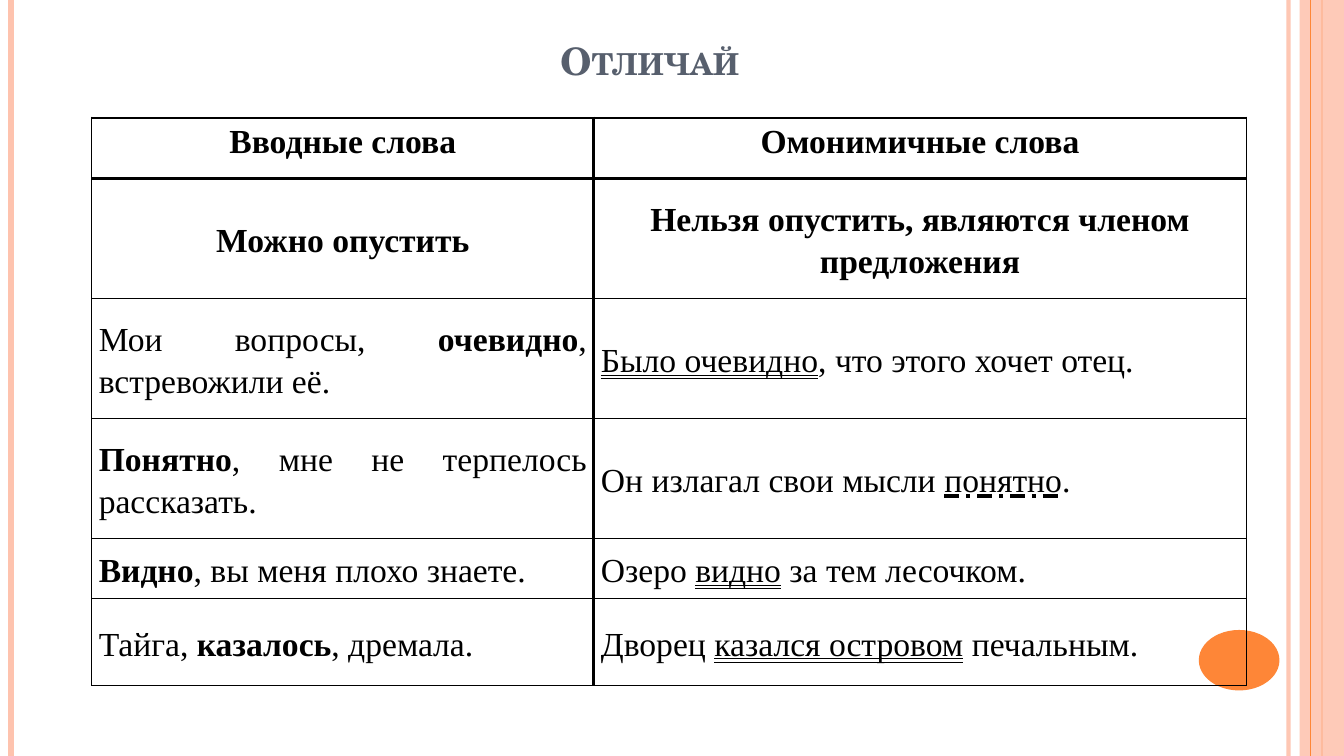
from lxml.etree import SubElement
from pptx import Presentation
from pptx.dml.color import RGBColor
from pptx.enum.shapes import MSO_CONNECTOR, MSO_SHAPE
from pptx.enum.text import MSO_ANCHOR, MSO_UNDERLINE, PP_ALIGN
from pptx.oxml.ns import qn
from pptx.util import Emu, Pt

W, H = 1333, 750
COLORS = {"peach": "FEC3AE", "orange": "FE8637", "title": "575F6D", "black": "000000"}
TITLE_FONT, TABLE_FONT = "TeX Gyre Schola", "Times New Roman"
THIN, THICK = 1, 2.25

COL_WIDTHS = [498, 647]
ROW_HEIGHTS = [60, 119, 119, 119, 60, 86]
CENTER, JUSTIFY, LEFT = PP_ALIGN.CENTER, PP_ALIGN.JUSTIFY, PP_ALIGN.LEFT
BOLD = {"bold": True}
PREDICATE = {"underline": MSO_UNDERLINE.DOUBLE_LINE}
ADVERBIAL = {"underline": MSO_UNDERLINE.DOT_DASH_HEAVY_LINE}

# Each cell: alignment, then runs of (text, font settings)
ROWS = [
    [(CENTER, [("Вводные слова", BOLD)]),
     (CENTER, [("Омонимичные слова", BOLD)])],
    [(CENTER, [("Можно опустить", BOLD)]),
     (CENTER, [("Нельзя опустить, являются членом предложения", BOLD)])],
    [(JUSTIFY, [("Мои вопросы, ", {}), ("очевидно", BOLD), (", встревожили её.", {})]),
     (LEFT, [("Было очевидно", PREDICATE), (", что этого хочет отец.", {})])],
    [(JUSTIFY, [("Понятно", BOLD), (", мне не терпелось рассказать.", {})]),
     (JUSTIFY, [("Он излагал свои мысли ", {}), ("понятно", ADVERBIAL), (".", {})])],
    [(JUSTIFY, [("Видно", BOLD), (", вы меня плохо знаете.", {})]),
     (JUSTIFY, [("Озеро ", {}), ("видно", PREDICATE), (" за тем лесочком.", {})])],
    [(JUSTIFY, [("Тайга, ", {}), ("казалось", BOLD), (", дремала.", {})]),
     (JUSTIFY, [("Дворец ", {}), ("казался островом", PREDICATE), (" печальным.", {})])],
]


def px(n):
    return Emu(n * 9144)


def rgb(name):
    return RGBColor.from_string(COLORS[name])


def set_alpha(sp, percent):
    """Make the shape's only colour partly transparent."""
    clr = next(sp._element.spPr.iter(qn("a:srgbClr")))
    SubElement(clr, qn("a:alpha"), val=str(percent * 1000))


def add_stripe(s, x, color, width, alpha=100):
    line = s.shapes.add_connector(MSO_CONNECTOR.STRAIGHT, px(x), 0, px(x), px(H))
    line.line.color.rgb = rgb(color)
    line.line.width = Pt(width)
    if alpha < 100:
        set_alpha(line, alpha)
    SubElement(line._element.spPr, qn("a:effectLst"))


def add_filled(s, kind, x, y, w, h, color):
    sp = s.shapes.add_shape(kind, px(x), px(y), px(w), px(h))
    sp.shadow.inherit = False
    sp.fill.solid()
    sp.fill.fore_color.rgb = rgb(color)
    sp.line.fill.background()
    return sp


def add_run(p, text, font, size, color, bold=False, underline=False):
    r = p.add_run()
    r.text = text
    r.font.name = font
    r.font.size = Pt(size)
    r.font.color.rgb = rgb(color)
    r.font.bold = bold
    r.font.underline = underline
    return r


def add_title(s, text):
    tf = s.shapes.add_textbox(px(100), px(32), px(1089), px(55)).text_frame
    tf.word_wrap = True
    tf.vertical_anchor = MSO_ANCHOR.BOTTOM
    p = tf.paragraphs[0]
    p.alignment = CENTER
    r = add_run(p, text, TITLE_FONT, 27, "title", bold=True)
    r.font._element.set("cap", "small")


def set_borders(cell, left, right, top, bottom):
    tc_pr = cell._tc.get_or_add_tcPr()
    for side, width in zip("LRTB", (left, right, top, bottom)):
        ln = SubElement(tc_pr, qn(f"a:ln{side}"), w=str(Pt(width)))
        fill = SubElement(ln, qn("a:solidFill"))
        SubElement(fill, qn("a:srgbClr"), val=COLORS["black"])


def fill_cell(cell, align, runs, anchor):
    cell.fill.background()
    cell.margin_left = cell.margin_right = px(7)
    cell.margin_top = cell.margin_bottom = 0
    cell.vertical_anchor = anchor
    p = cell.text_frame.paragraphs[0]
    p.alignment = align
    p.line_spacing = 1.15
    for text, style in runs:
        add_run(p, text, TABLE_FONT, 24, "black", **style)


def add_word_table(s):
    table = s.shapes.add_table(len(ROWS), len(COL_WIDTHS), px(91), px(117),
                               px(sum(COL_WIDTHS)), px(sum(ROW_HEIGHTS))).table
    table.first_row = table.horz_banding = False
    for column, width in zip(table.columns, COL_WIDTHS):
        column.width = px(width)
    for i, (height, row) in enumerate(zip(ROW_HEIGHTS, ROWS)):
        table.rows[i].height = px(height)
        for j, (align, runs) in enumerate(row):
            cell = table.cell(i, j)
            set_borders(cell,
                        left=THICK if j == 1 else THIN,
                        right=THICK if j == 0 else THIN,
                        top=THICK if i <= 1 else THIN,
                        bottom=THICK if i == 0 else THIN)
            fill_cell(cell, align, runs, MSO_ANCHOR.MIDDLE if i else MSO_ANCHOR.TOP)


def main():
    prs = Presentation()
    prs.slide_width, prs.slide_height = px(W), px(H)
    s = prs.slides.add_slide(prs.slide_layouts[6])

    add_stripe(s, 1278, "peach", 3, alpha=93)
    add_stripe(s, 11, "peach", 4.5)
    add_stripe(s, 1311, "orange", 1.5)
    band = add_filled(s, MSO_SHAPE.RECTANGLE, 1289, 0, 44, H, "peach")
    set_alpha(band, 87)
    add_stripe(s, 1300, "orange", 0.75)
    add_filled(s, MSO_SHAPE.OVAL, 1189, 625, 80, 60, "orange")

    add_title(s, "Отличай")
    add_word_table(s)
    prs.save("out.pptx")


if __name__ == "__main__":
    main()
